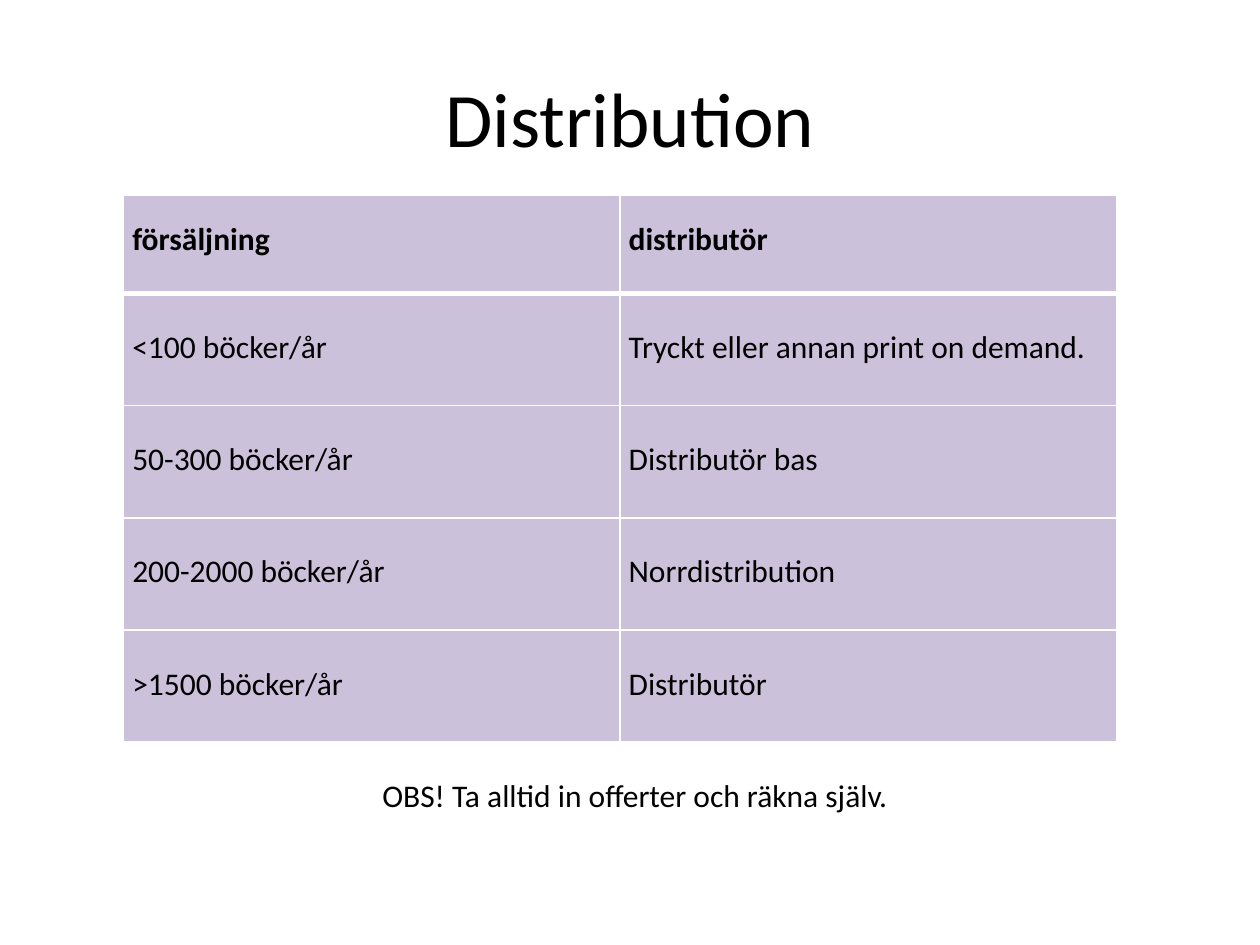
from lxml import etree
from pptx import Presentation
from pptx import util as u
from pptx.dml.color import RGBColor
from pptx.enum import text
from pptx.oxml.ns import qn

COLORS = {"ink": "000000", "cell": "CCC1DA", "rule": "FFFFFF"}
FONT = "Calibri"
ROWS = [
    ("försäljning", "distributör"),
    ("<100 böcker/år", "Tryckt eller annan print on demand."),
    ("50-300 böcker/år", "Distributör bas"),
    ("200-2000 böcker/år", "Norrdistribution"),
    (">1500 böcker/år", "Distributör"),
]
HEADER_HEIGHT, ROW_HEIGHT, COLUMN_WIDTH = 0.78, 0.89, 3.94


def write(frame, words, size=18, bold=False, align=None, line=None, after=None):
    """Put one formatted paragraph into a text frame."""
    para = frame.paragraphs[0]
    para.alignment = align
    if line:
        para.line_spacing = u.Pt(line)
    if after:
        para.space_after = u.Pt(after)
    span = para.add_run()
    span.text = words
    span.font.name = FONT
    span.font.size = u.Pt(size)
    span.font.bold = bold
    span.font.color.rgb = RGBColor.from_string(COLORS["ink"])


def place(box, left, top, width, height):
    """Move and size a shape in inches."""
    box.left, box.top = u.Inches(left), u.Inches(top)
    box.width, box.height = u.Inches(width), u.Inches(height)


def add_borders(cell, widths):
    """Draw the cell edges with the given widths in points."""
    properties = cell._tc.get_or_add_tcPr()
    for side, width in widths.items():
        edge = etree.SubElement(properties, qn(f"a:ln{side}"), w=str(u.Pt(width)))
        fill = etree.SubElement(edge, qn("a:solidFill"))
        etree.SubElement(fill, qn("a:srgbClr"), val=COLORS["rule"])


def style_cell(cell, words, row):
    """Format one table cell according to its row."""
    header = row == 0
    cell.margin_left = cell.margin_right = u.Inches(0.07)
    cell.margin_top = cell.margin_bottom = 0
    cell.vertical_anchor = text.MSO_ANCHOR.MIDDLE
    add_borders(cell, {"L": 1, "R": 1, "T": 3 if row == 1 else 1, "B": 3 if header else 1})
    cell.fill.solid()
    cell.fill.fore_color.rgb = RGBColor.from_string(COLORS["cell"])
    write(cell.text_frame, words, bold=header, line=17 if header else 20, after=6)


def add_distributors(page):
    """Add the table of sales volumes and distributors."""
    heights = [HEADER_HEIGHT] + [ROW_HEIGHT] * (len(ROWS) - 1)
    size = (2 * COLUMN_WIDTH, sum(heights))
    table = page.shapes.add_table(len(ROWS), 2, *map(u.Inches, (0.98, 1.55, *size))).table
    for column in table.columns:
        column.width = u.Inches(COLUMN_WIDTH)
    for row, (entries, height) in enumerate(zip(ROWS, heights)):
        table.rows[row].height = u.Inches(height)
        for column, words in enumerate(entries):
            style_cell(table.cell(row, column), words, row)


def add_note(page, words):
    """Add the centred remark under the table."""
    box = page.shapes.add_textbox(*map(u.Inches, (1.14, 6.11, 7.8, 0.4)))
    box.text_frame.word_wrap = True
    box.text_frame.auto_size = text.MSO_AUTO_SIZE.SHAPE_TO_FIT_TEXT
    write(box.text_frame, words, align=text.PP_ALIGN.CENTER)


def main():
    """Build the distribution slide."""
    deck = Presentation()
    deck.slide_width, deck.slide_height = u.Inches(10), u.Inches(7.5)
    page = deck.slides.add_slide(deck.slide_layouts[5])
    title = page.shapes.title
    place(title, 0.5, 0.3, 9, 1.25)
    title.text_frame.vertical_anchor = text.MSO_ANCHOR.MIDDLE
    write(title.text_frame, "Distribution", size=44, align=text.PP_ALIGN.CENTER)
    add_distributors(page)
    add_note(page, "OBS! Ta alltid in offerter och räkna själv.")
    deck.save("out.pptx")


if __name__ == "__main__":
    main()
